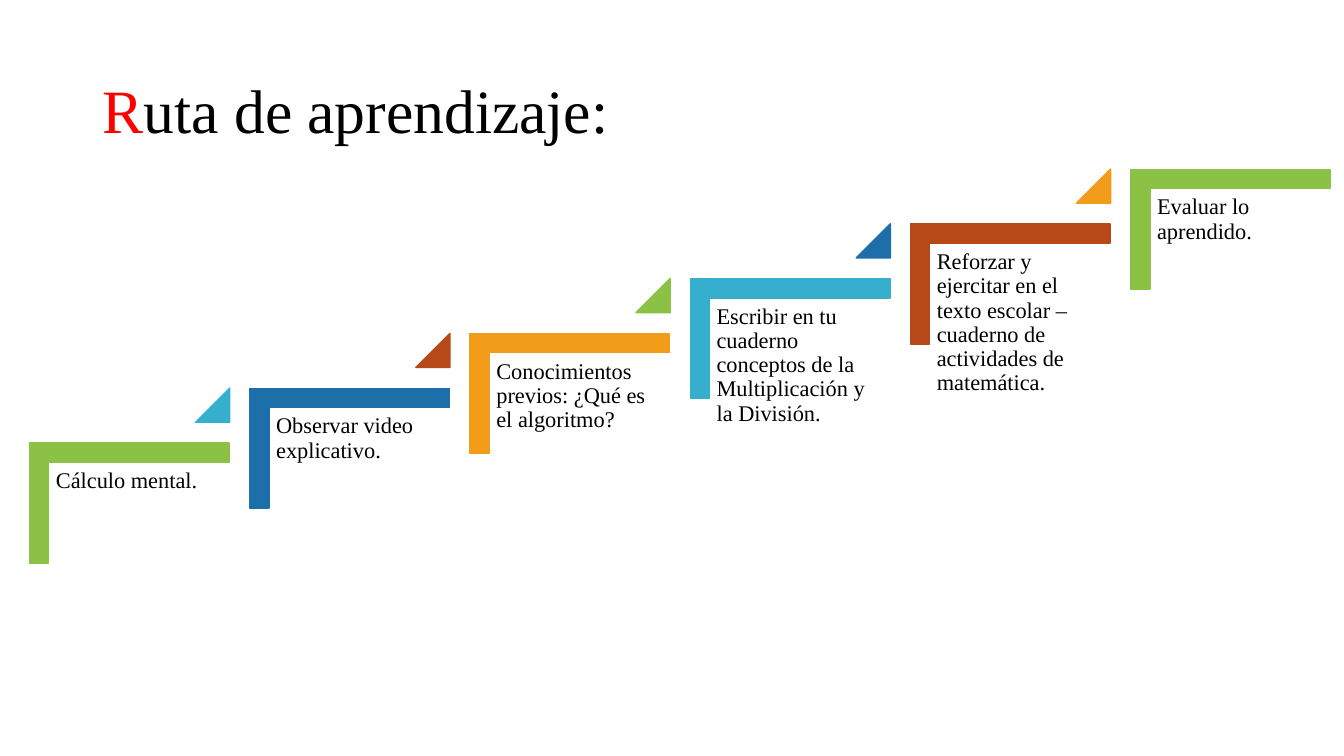
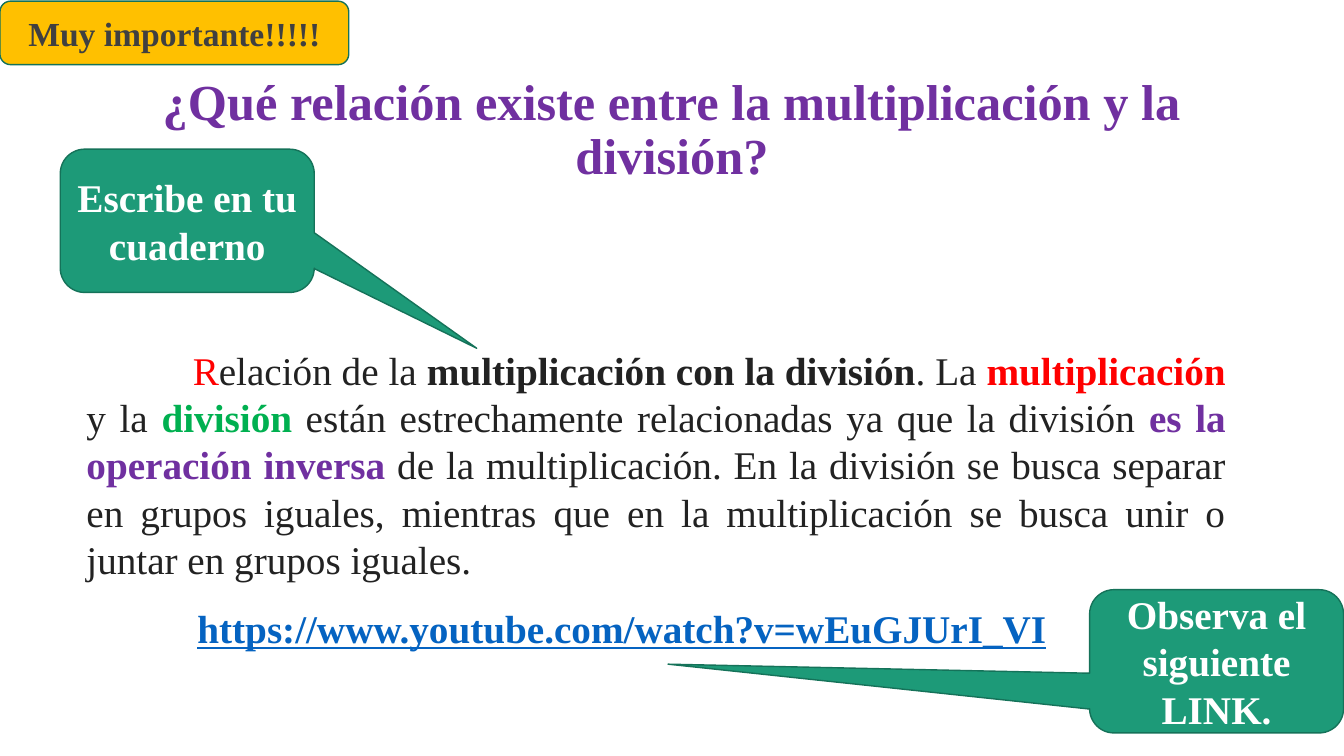
from dataclasses import dataclass

from lxml import etree
from pptx import Presentation
from pptx.dml.color import RGBColor
from pptx.enum.shapes import MSO_SHAPE
from pptx.enum.text import MSO_ANCHOR, MSO_AUTO_SIZE, PP_ALIGN
from pptx.oxml.ns import qn
from pptx.util import Cm, Pt

LEFT, CENTER, JUSTIFY = PP_ALIGN.LEFT, PP_ALIGN.CENTER, PP_ALIGN.JUSTIFY
TOP, MIDDLE = MSO_ANCHOR.TOP, MSO_ANCHOR.MIDDLE
NO_AUTOFIT = MSO_AUTO_SIZE.NONE
CORNER, TRIANGLE = MSO_SHAPE.CORNER, MSO_SHAPE.RIGHT_TRIANGLE
TRIANGLE = MSO_SHAPE.ISOSCELES_TRIANGLE
BADGE, CALLOUT = MSO_SHAPE.ROUNDED_RECTANGLE, MSO_SHAPE.ROUNDED_RECTANGULAR_CALLOUT
TITLE_ONLY, TITLE_AND_BODY = 5, 1


@dataclass(frozen=True)
class Theme:
    font: str = "Times New Roman"
    title_size: int = 44
    question_size: int = 36
    body_size: int = 28
    badge_size: int = 24
    step_size: int = 16
    black: str = "000000"
    white: str = "FFFFFF"
    ink: str = "222222"
    gray: str = "404040"
    red: str = "FF0000"
    purple: str = "7030A0"
    green: str = "00B050"
    link: str = "0563C1"
    gold: str = "FFC000"
    teal: str = "1D9A78"
    outline: str = "157259"
    steps: tuple = ("8BC145", "1D6FA9", "F19D19", "36AFCE", "B74919")
    tight: float = 0.9


THEME = Theme()

STEPS = (
    "Cálculo mental.",
    "Observar video explicativo.",
    "Conocimientos previos: ¿Qué es el algoritmo?",
    "Escribir en tu cuaderno conceptos de la Multiplicación y la División.",
    "Reforzar y ejercitar en el texto escolar – cuaderno de actividades de matemática.",
    "Evaluar lo aprendido.",
)
STEP_DX, STEP_DY = 5.55, -1.38

RELATION = (
    ("R", THEME.red, False),
    ("elación de la ", THEME.ink, False),
    ("multiplicación con la división", THEME.ink, True),
    (". La ", THEME.ink, False),
    ("multiplicación", THEME.red, True),
    (" y la ", THEME.ink, False),
    ("división", THEME.green, True),
    (" están estrechamente relacionadas ya que la división ", THEME.ink, False),
    ("es la operación inversa ", THEME.purple, True),
    ("de la multiplicación. En la división se busca separar en grupos iguales, "
     "mientras que en la multiplicación se busca unir o juntar en grupos iguales.",
     THEME.ink, False),
)


def set_values(target, values):
    for name, value in values.items():
        setattr(target, name, value)


def place(shape, box):
    set_values(shape, dict(zip(("left", "top", "width", "height"), map(Cm, box))))


def write(shape, runs, size, align=LEFT, anchor=TOP, spacing=1.0,
          indent=0, underline=False, inset=None):
    """Fill the shape with one paragraph of (text, colour, bold) runs."""
    frame = shape.text_frame
    set_values(frame, {"word_wrap": True, "auto_size": NO_AUTOFIT,
                       "vertical_anchor": anchor})
    if inset is not None:
        sides = ("left", "top", "right", "bottom")
        set_values(frame, {f"margin_{side}": Cm(inset) for side in sides})
    paragraph = frame.paragraphs[0]
    properties = paragraph._p.get_or_add_pPr()
    properties.set("marL", "0")
    properties.set("indent", str(Cm(indent)))
    etree.SubElement(properties, qn("a:buNone"))
    set_values(paragraph, {"alignment": align, "line_spacing": spacing,
                           "space_before": Pt(0), "space_after": Pt(0)})
    for text, color, bold in runs:
        run = paragraph.add_run()
        run.text = text
        set_values(run.font, {"name": THEME.font, "size": Pt(size),
                              "bold": bold, "underline": underline})
        run.font.color.rgb = RGBColor.from_string(color)


def add_title(slide, top, runs, size, align):
    place(slide.shapes.title, (2.33, top, 29.21, 3.68))
    write(slide.shapes.title, runs, size, align, MIDDLE, THEME.tight)


def add_figure(slide, kind, box, fill, line, adjustments=()):
    figure = slide.shapes.add_shape(kind, *map(Cm, box))
    figure.shadow.inherit = False
    figure.fill.solid()
    figure.fill.fore_color.rgb = RGBColor.from_string(fill)
    figure.line.color.rgb = RGBColor.from_string(line)
    figure.line.width = Pt(1)
    for index, value in enumerate(adjustments):
        figure.adjustments[index] = value
    return figure


def add_text(slide, box, runs, size, **layout):
    write(slide.shapes.add_textbox(*map(Cm, box)), runs, size, **layout)


def add_label(slide, kind, box, fill, text, color, size, adjustments=()):
    """Add an outlined shape with bold centred text."""
    label = add_figure(slide, kind, box, fill, THEME.outline, adjustments)
    write(label, [(text, color, True)], size, CENTER, MIDDLE)


def add_step(slide, index, text):
    """Add one stair; a triangle in a later colour leads on to the next."""
    dx, dy = index * STEP_DX, index * STEP_DY
    colors = THEME.steps
    color = colors[index % len(colors)]
    corner = add_figure(slide, CORNER, (1.75 + dx, 10.16 + dy, 3.02, 5.03),
                        color, color, (0.16, 0.16))
    corner.rotation = 90
    add_text(slide, (1.24 + dx, 11.66 + dy, 4.52, 3.96),
             [(text, THEME.black, False)], THEME.step_size,
             spacing=THEME.tight, inset=0.17)
    if index < len(STEPS) - 1:
        accent = colors[(index + 3) % len(colors)]
        add_figure(slide, TRIANGLE, (4.93 + dx, 9.78 + dy, 0.86, 0.86),
                   accent, accent, (1,))


def build_route(deck):
    slide = deck.slides.add_slide(deck.slide_layouts[TITLE_ONLY])
    add_title(slide, 1.02, [("R", THEME.red, False),
                            ("uta de aprendizaje:", THEME.black, False)],
              THEME.title_size, LEFT)
    for index, text in enumerate(STEPS):
        add_step(slide, index, text)


def build_relation(deck):
    slide = deck.slides.add_slide(deck.slide_layouts[TITLE_AND_BODY])
    question = "¿Qué relación existe entre la multiplicación y la división?"
    add_title(slide, 1.47, [(question, THEME.purple, True)],
              THEME.question_size, CENTER)
    video = slide.placeholders[1]
    place(video, (4.72, 15.24, 22.6, 1.6))
    write(video, [("https://www.youtube.com/watch?v=wEuGJUrI_VI", THEME.link, True)],
          THEME.body_size, spacing=THEME.tight, underline=True)
    add_text(slide, (1.93, 8.61, 29.21, 6.25), RELATION, THEME.body_size,
             align=JUSTIFY, indent=2.68)
    add_label(slide, BADGE, (0, 0.03, 8.79, 1.6), THEME.gold,
              "Muy importante!!!!!", THEME.gray, THEME.badge_size)
    callouts = (
        ((1.52, 3.76, 6.4, 3.61), "Escribe en tu cuaderno", (1.14, 0.89, 0.17)),
        ((27.46, 14.86, 6.4, 3.61), "Observa el siguiente LINK.", (-2.16, 0.02, 0.17)),
    )
    for box, text, tail in callouts:
        add_label(slide, CALLOUT, box, THEME.teal, text, THEME.white,
                  THEME.body_size, tail)


def main():
    deck = Presentation()
    set_values(deck, {"slide_width": Cm(33.87), "slide_height": Cm(19.05)})
    build_route(deck)
    build_relation(deck)
    deck.save("out.pptx")


if __name__ == "__main__":
    main()
